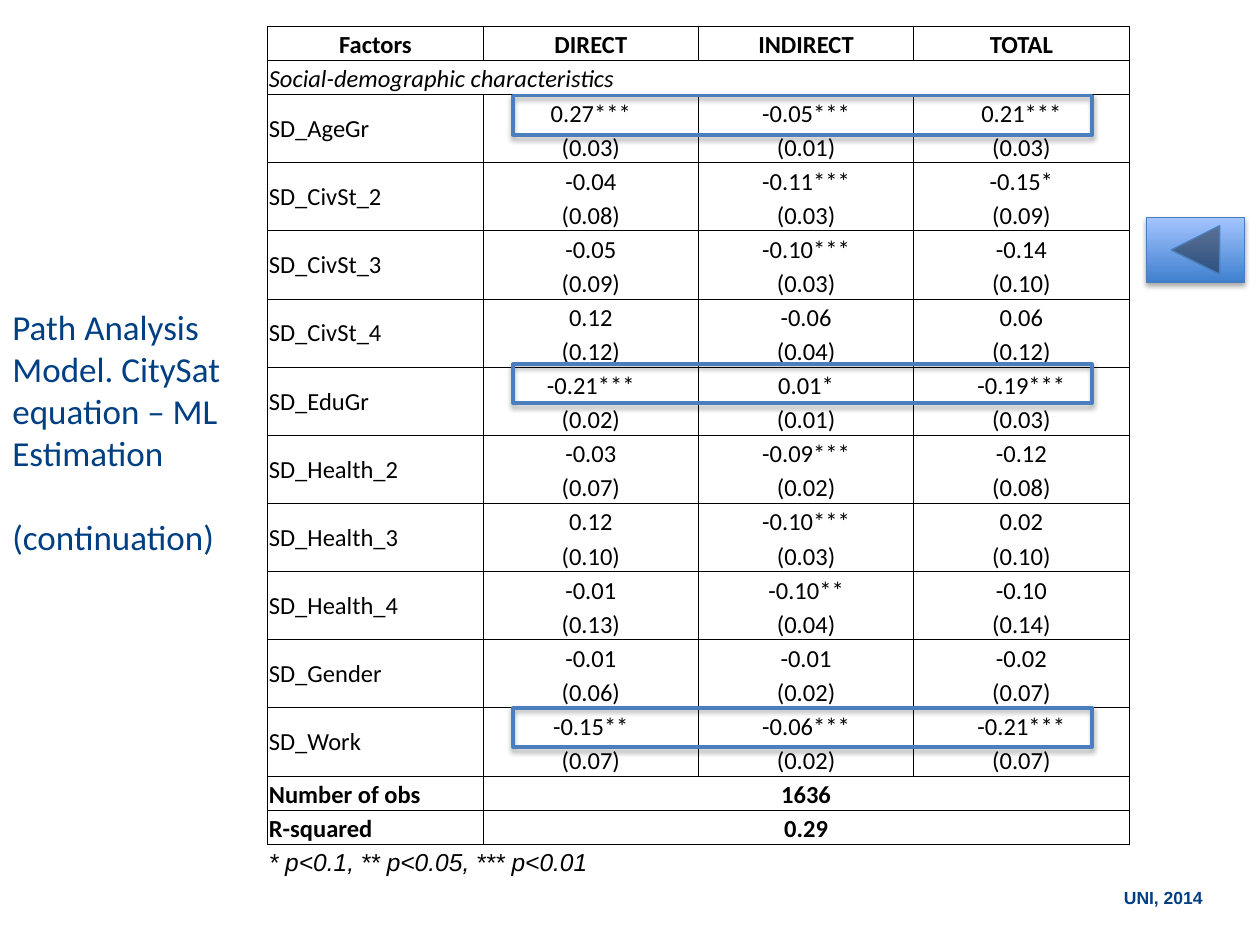
import pptx
import pptx.util
import pptx.dml.color
import pptx.enum.shapes
import pptx.enum.text
import pptx.oxml
import pptx.oxml.ns

Cm, Pt = pptx.util.Cm, pptx.util.Pt
MSO_SHAPE = pptx.enum.shapes.MSO_SHAPE
ALIGN = pptx.enum.text.PP_ALIGN
ANCHOR = pptx.enum.text.MSO_ANCHOR
NS = pptx.oxml.ns.nsdecls("a")

NAVY, BLUE, BLACK = "003F82", "4B7EBC", "000000"


def rgb(value):
    return pptx.dml.color.RGBColor.from_string(value)


def set_font(p, size, color, name="Calibri", bold=False, italic=False):
    """Format every run of a paragraph."""
    for r in p.runs:
        f = r.font
        f.size, f.name, f.bold, f.italic = Pt(size), name, bold, italic
        f.color.rgb = rgb(color)


prs = pptx.Presentation()
prs.slide_width, prs.slide_height = Cm(25.4), Cm(19.05)
s = prs.slides.add_slide(prs.slide_layouts[6])

# Table: each factor takes a row of estimates and a row of standard errors
factors = [
    ("SD_AgeGr", "0.27*** -0.05*** 0.21***", "(0.03) (0.01) (0.03)"),
    ("SD_CivSt_2", "-0.04 -0.11*** -0.15*", "(0.08) (0.03) (0.09)"),
    ("SD_CivSt_3", "-0.05 -0.10*** -0.14", "(0.09) (0.03) (0.10)"),
    ("SD_CivSt_4", "0.12 -0.06 0.06", "(0.12) (0.04) (0.12)"),
    ("SD_EduGr", "-0.21*** 0.01* -0.19***", "(0.02) (0.01) (0.03)"),
    ("SD_Health_2", "-0.03 -0.09*** -0.12", "(0.07) (0.02) (0.08)"),
    ("SD_Health_3", "0.12 -0.10*** 0.02", "(0.10) (0.03) (0.10)"),
    ("SD_Health_4", "-0.01 -0.10** -0.10", "(0.13) (0.04) (0.14)"),
    ("SD_Gender", "-0.01 -0.01 -0.02", "(0.06) (0.02) (0.07)"),
    ("SD_Work", "-0.15** -0.06*** -0.21***", "(0.07) (0.02) (0.07)"),
]
rows = [["Factors", "DIRECT", "INDIRECT", "TOTAL"],
        ["Social-demographic characteristics", "", "", ""]]
for factor, estimates, errors in factors:
    rows += [[factor, *estimates.split()], ["", *errors.split()]]
rows += [["Number of obs", "1636", "", ""],
         ["R-squared", "0.29", "", ""],
         ["* p<0.1, ** p<0.05, *** p<0.01", "", "", ""]]

first, last = 2, len(rows) - 1
totals = last - 2
row_h = Cm(16.5) // last
tbl = s.shapes.add_table(len(rows), 4, Cm(5.4), Cm(0.53),
                         Cm(17.36), row_h * last + Cm(0.74)).table
tbl.first_row = tbl.horz_banding = False
for col in tbl.columns:
    col.width = Cm(4.34)
for row in tbl.rows:
    row.height = row_h
tbl.rows[last].height = Cm(0.74)

for i in (1, last):
    tbl.cell(i, 0).merge(tbl.cell(i, 3))
for i in range(first, totals, 2):
    tbl.cell(i, 0).merge(tbl.cell(i + 1, 0))
for i in (totals, totals + 1):
    tbl.cell(i, 1).merge(tbl.cell(i, 3))

for i, texts in enumerate(rows):
    in_factors = first <= i < totals
    is_estimate = in_factors and (i - first) % 2 == 0
    is_error = in_factors and not is_estimate
    for j, text in enumerate(texts):
        cell = tbl.cell(i, j)
        cell.margin_left = cell.margin_right = cell.margin_top = Cm(0.02)
        cell.margin_bottom = 0
        middle = i == last or (in_factors and j == 0)
        cell.vertical_anchor = ANCHOR.MIDDLE if middle else ANCHOR.BOTTOM
        if i == last:
            sides = "T"
        elif is_estimate and j:
            sides = "LRT"
        elif is_error and j:
            sides = "LRB"
        else:
            sides = "LRTB"
        tcPr = cell._tc.get_or_add_tcPr()
        for side in "LRTB":
            paint = (f'<a:solidFill><a:srgbClr val="{BLACK}"/></a:solidFill>'
                     if side in sides else "<a:noFill/>")
            tcPr.append(pptx.oxml.parse_xml(
                f'<a:ln{side} {NS} w="6350">{paint}</a:ln{side}>'))
        cell.fill.background()
        if text:
            p = cell.text_frame.paragraphs[0]
            p.text = text
            p.alignment = ALIGN.CENTER if j or i == 0 else ALIGN.LEFT
            set_font(p, 14, BLACK, "Arial" if i == last else "Calibri",
                     bold=i == 0 or totals <= i < last, italic=i in (1, last))

# Title
tf = s.shapes.add_textbox(0, Cm(8.13), Cm(5.08), Cm(1.14)).text_frame
tf.word_wrap = True
tf.vertical_anchor = ANCHOR.MIDDLE
tf.text = "Path Analysis Model. CitySat equation – ML Estimation\n(continuation)"
for p in tf.paragraphs:
    set_font(p, 20, NAVY)
tf.paragraphs[1].space_before = Pt(24)

# Footer
tf = s.shapes.add_textbox(Cm(12.98), Cm(17.75), Cm(11.51), Cm(0.69)).text_frame
tf.word_wrap = True
p = tf.paragraphs[0]
p.text = "UNI, 2014"
p.alignment = ALIGN.RIGHT
p.space_before = Pt(2)
set_font(p, 10, NAVY, "Arial", bold=True)

# Frames around the key estimates, and the back button
frames = [s.shapes.add_shape(MSO_SHAPE.RECTANGLE, Cm(10.34), Cm(top), Cm(11.68), Cm(0.79))
          for top in (14.27, 1.93, 7.34)]
for sp in frames:
    sp.fill.background()
    sp.line.width = Pt(2)

button = s.shapes.add_shape(MSO_SHAPE.ACTION_BUTTON_BACK_OR_PREVIOUS,
                            Cm(23.11), Cm(4.39), Cm(1.98), Cm(1.3))
button.fill.gradient()
button.fill.gradient_angle = 90
for stop, color in zip(button.fill.gradient_stops, ("3F80CE", "A4C4FF")):
    stop.color.rgb = rgb(color)
button.line.width = Pt(0.75)

for sp in [*frames, button]:
    sp.line.color.rgb = rgb(BLUE)
    sp.shadow.inherit = False
    effects = sp._element.spPr.find(pptx.oxml.ns.qn("a:effectLst"))
    effects.append(pptx.oxml.parse_xml(
        f'<a:outerShdw {NS} blurRad="{Pt(3.1)}" dist="{Pt(1.8)}" dir="5400000" rotWithShape="0">'
        f'<a:srgbClr val="{BLACK}"><a:alpha val="35000"/></a:srgbClr></a:outerShdw>'))

prs.save("out.pptx")
